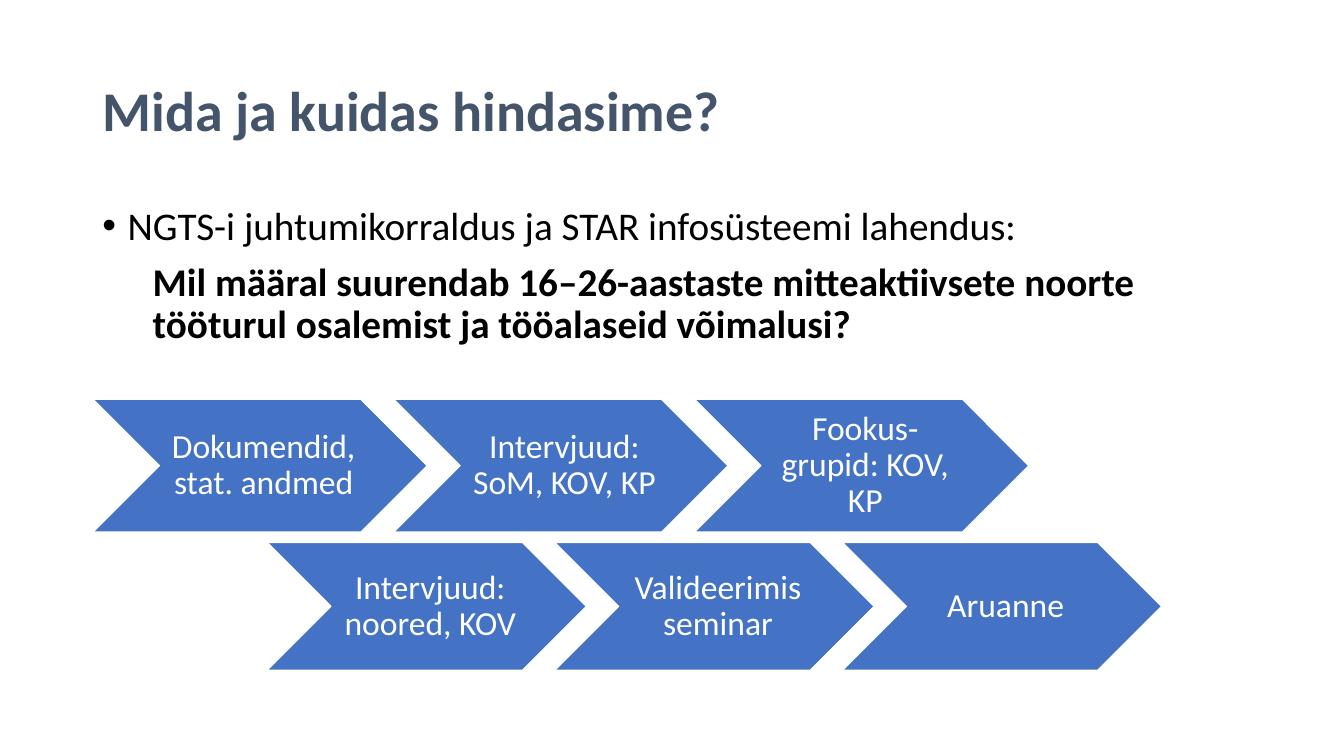
from dataclasses import dataclass

from lxml import etree
from pptx import Presentation
from pptx import util as u
from pptx.dml.color import RGBColor
from pptx.enum import shapes, text
from pptx.oxml.ns import qn

FONT = "Calibri"
HUES = {"title": "44546A", "body": "000000", "step": "4472C4", "white": "FFFFFF"}


@dataclass
class Row:
    left: float
    top: float
    width: float
    height: float
    pitch: float
    steps: tuple[str, ...]


ROWS = (
    Row(2.34, 10.06, 8.43, 3.35, 7.58,
        ("Dokumendid, stat. andmed", "Intervjuud: SoM, KOV, KP", "Fookus-grupid: KOV, KP")),
    Row(6.73, 13.67, 8.05, 3.22, 7.25,
        ("Intervjuud: noored, KOV", "Valideerimisseminar", "Aruanne")),
)


def hue(name: str) -> RGBColor:
    return RGBColor.from_string(HUES[name])


def write(para, words: str, size: int, tint: str, bold: bool = False,
          align=text.PP_ALIGN.LEFT) -> None:
    para.alignment = align
    para.line_spacing = 0.9
    run = para.add_run()
    run.text = words
    run.font.name = FONT
    run.font.size = u.Pt(size)
    run.font.bold = bold
    run.font.color.rgb = hue(tint)


def indent(para, left: float, first: float, mark: str = "") -> None:
    props = para._p.get_or_add_pPr()
    props.set("marL", str(u.Cm(left)))
    props.set("indent", str(u.Cm(first)))
    if mark:
        etree.SubElement(props, qn("a:buFont")).set("typeface", "Arial")
        etree.SubElement(props, qn("a:buChar")).set("char", mark)
    else:
        etree.SubElement(props, qn("a:buNone"))


def add_title(slide) -> None:
    title = slide.shapes.title
    title.left, title.top = u.Cm(2.33), u.Cm(1.01)
    title.width, title.height = u.Cm(29.21), u.Cm(3.68)
    frame = title.text_frame
    frame.auto_size = text.MSO_AUTO_SIZE.NONE
    frame.vertical_anchor = text.MSO_ANCHOR.MIDDLE
    write(frame.paragraphs[0], "Mida ja kuidas hindasime?", 40, "title", True)


def add_body(slide) -> None:
    box = slide.shapes.add_textbox(u.Cm(2.33), u.Cm(5.07), u.Cm(29.21), u.Cm(4.6))
    frame = box.text_frame
    frame.word_wrap = True
    topic, query = frame.paragraphs[0], frame.add_paragraph()
    write(topic, "NGTS-i juhtumikorraldus ja STAR infosüsteemi lahendus:", 28, "body")
    write(query, "Mil määral suurendab 16–26-aastaste mitteaktiivsete noorte "
          "tööturul osalemist ja tööalaseid võimalusi?", 28, "body", True)
    for para in (topic, query):
        para.space_before = u.Pt(10)
    indent(topic, 0.64, -0.64, "•")
    indent(query, 1.27, 0)


def add_row(slide, row: Row) -> None:
    for i, words in enumerate(row.steps):
        step = slide.shapes.add_shape(
            shapes.MSO_SHAPE.CHEVRON, u.Cm(row.left + i * row.pitch), u.Cm(row.top),
            u.Cm(row.width), u.Cm(row.height))
        step.shadow.inherit = False
        step.fill.solid()
        step.fill.fore_color.rgb = hue("step")
        step.line.color.rgb = hue("white")
        step.line.width = u.Pt(1)
        frame = step.text_frame
        frame.word_wrap = True
        frame.vertical_anchor = text.MSO_ANCHOR.MIDDLE
        frame.margin_left = u.Cm(0.27)
        frame.margin_right = frame.margin_top = frame.margin_bottom = u.Cm(0.09)
        write(frame.paragraphs[0], words, 24, "white", align=text.PP_ALIGN.CENTER)


def main() -> None:
    deck = Presentation()
    deck.slide_width, deck.slide_height = u.Cm(33.87), u.Cm(19.05)
    slide = deck.slides.add_slide(deck.slide_layouts.get_by_name("Title Only"))
    add_title(slide)
    add_body(slide)
    for row in ROWS:
        add_row(slide, row)
    deck.save("out.pptx")


if __name__ == "__main__":
    main()
